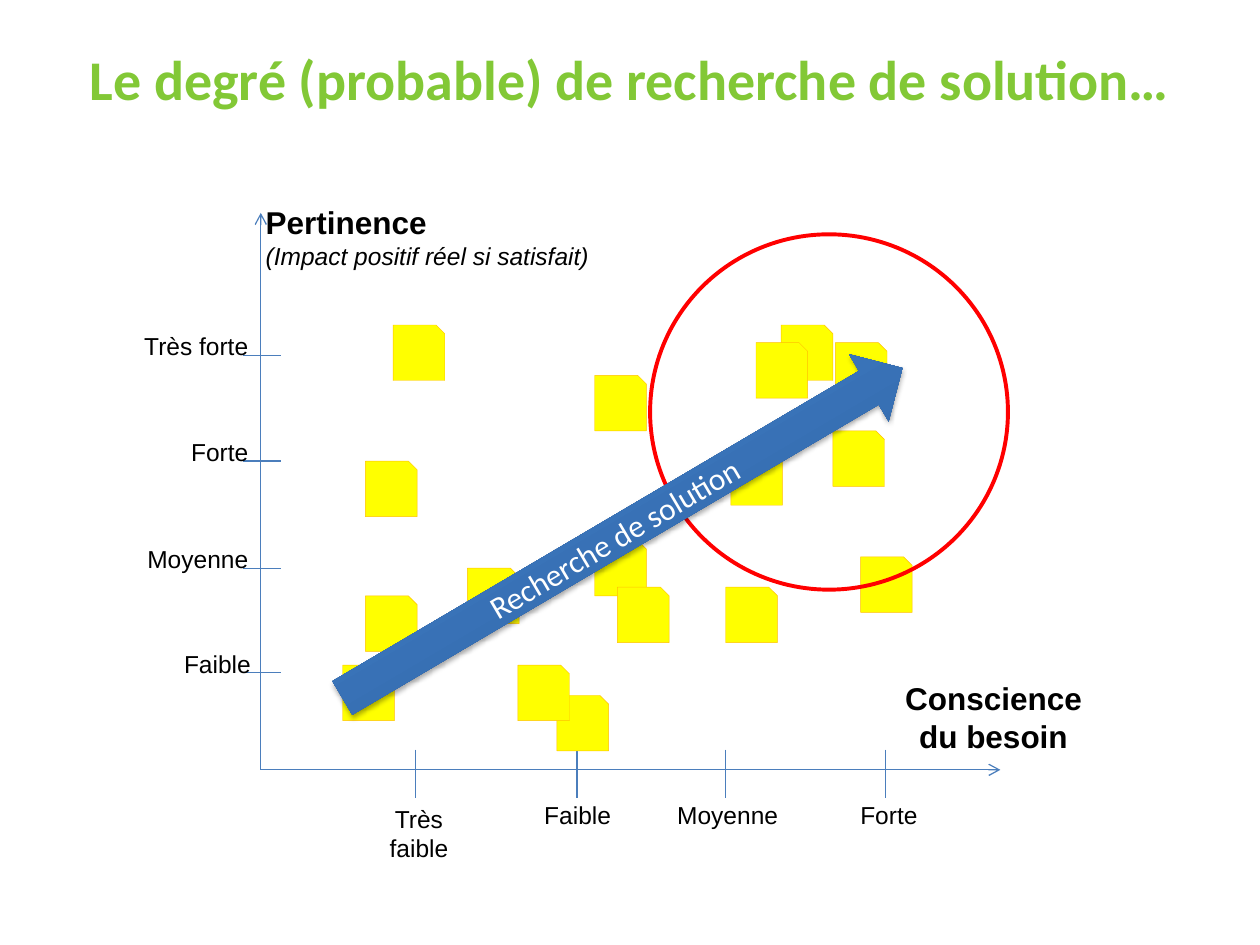
from dataclasses import dataclass

from lxml import etree
from pptx import Presentation
from pptx.dml.color import RGBColor
from pptx.enum.shapes import MSO_CONNECTOR, MSO_SHAPE
from pptx.enum.text import MSO_ANCHOR, PP_ALIGN
from pptx.oxml.ns import qn
from pptx.util import Inches, Pt

STRAIGHT = MSO_CONNECTOR.STRAIGHT
NOTE, CIRCLE, ARROW = MSO_SHAPE.SNIP_1_RECTANGLE, MSO_SHAPE.OVAL, MSO_SHAPE.RIGHT_ARROW
CENTER, RIGHT, JUSTIFY = PP_ALIGN.CENTER, PP_ALIGN.RIGHT, PP_ALIGN.JUSTIFY
MIDDLE = MSO_ANCHOR.MIDDLE

COLORS = {
    "title": "82C836", "text": "000000", "axis": "4B7EBC", "note": "FFFF00",
    "note_edge": "FFC000", "circle": "FF0000", "arrow_dark": "2F5F99",
    "arrow_light": "3D7CC7", "arrow_text": "FFFFFF", "shadow": "000000",
}


@dataclass
class Line:
    text: str
    size: int = 14
    bold: bool = False
    italic: bool = False


@dataclass
class Label:
    left: float
    top: float
    width: float
    height: float
    align: PP_ALIGN
    lines: list[Line]


def color(name: str) -> RGBColor:
    return RGBColor.from_string(COLORS[name])


def set_font(font, name: str, size: int, color_name: str) -> None:
    font.name, font.size = name, Pt(size)
    font.color.rgb = color(color_name)


def add_label(slide, label: Label) -> None:
    box = slide.shapes.add_textbox(
        Inches(label.left), Inches(label.top), Inches(label.width), Inches(label.height))
    box.text_frame.word_wrap = True
    para = box.text_frame.paragraphs[0]
    para.alignment, para.space_after = label.align, Pt(6)
    for index, line in enumerate(label.lines):
        if index:
            para.add_line_break()
        span = para.add_run()
        span.text = line.text
        set_font(span.font, "Arial", line.size, "text")
        span.font.bold, span.font.italic = line.bold, line.italic


def add_axis_line(slide, x1: float, y1: float, x2: float, y2: float,
                  arrowhead: bool = False) -> None:
    line = slide.shapes.add_connector(
        STRAIGHT, Inches(x1), Inches(y1), Inches(x2), Inches(y2))
    line.line.color.rgb, line.line.width = color("axis"), Pt(0.75)
    if arrowhead:
        etree.SubElement(line.line._get_or_add_ln(), qn("a:tailEnd"), type="arrow")
    etree.SubElement(line._element.spPr, qn("a:effectLst"))


def add_shape(slide, kind: MSO_SHAPE, left: float, top: float, width: float, height: float):
    shape = slide.shapes.add_shape(
        kind, Inches(left), Inches(top), Inches(width), Inches(height))
    shape.shadow.inherit = False
    return shape


def add_note(slide, left: float, top: float) -> None:
    note = add_shape(slide, NOTE, left, top, 0.41, 0.44)
    note.fill.solid()
    note.fill.fore_color.rgb = color("note")
    note.line.color.rgb, note.line.width = color("note_edge"), Pt(0.25)


def add_search_arrow(slide) -> None:
    arrow = add_shape(slide, ARROW, 2.36, 3.92, 5.16, 0.62)
    arrow.rotation = 329.5
    arrow.line.fill.background()
    arrow.fill.gradient()
    arrow.fill.gradient_angle = 90
    dark, light = arrow.fill.gradient_stops
    dark.color.rgb, dark.position = color("arrow_dark"), 0
    light.color.rgb, light.position = color("arrow_light"), 0.8
    # Soft shadow straight below
    effects = arrow._element.spPr.find(qn("a:effectLst"))
    shadow = etree.SubElement(
        effects, qn("a:outerShdw"), blurRad=str(Pt(3.1)), dist=str(Pt(1.8)),
        dir="5400000", rotWithShape="0")
    tint = etree.SubElement(shadow, qn("a:srgbClr"), val=COLORS["shadow"])
    etree.SubElement(tint, qn("a:alpha"), val="35000")

    arrow.text_frame.text = "Recherche de solution"
    arrow.text_frame.vertical_anchor = MIDDLE
    para = arrow.text_frame.paragraphs[0]
    para.alignment = CENTER
    set_font(para.runs[0].font, "Calibri", 18, "arrow_text")


# Axis geometry, labels and sticky notes
ORIGIN_X, ORIGIN_Y = 2.07, 6.11
X_TICKS = [3.3, 4.58, 5.76, 7.03]
Y_TICKS = [5.34, 4.51, 3.66, 2.82]
LABELS = [
    Label(2.01, 1.56, 3.12, 1.25, JUSTIFY, [
        Line("Pertinence", 18, bold=True),
        Line("(Impact positif réel si satisfait)", italic=True)]),
    Label(6.83, 5.34, 2.11, 0.63, CENTER, [
        Line("Conscience", 18, bold=True), Line("du besoin", 18, bold=True)]),
    Label(2.27, 6.33, 2.11, 0.81, CENTER, [Line("Très"), Line("faible")]),
    Label(3.53, 6.3, 2.11, 0.81, CENTER, [Line("Faible")]),
    Label(4.72, 6.3, 2.11, 0.81, CENTER, [Line("Moyenne")]),
    Label(6, 6.3, 2.11, 0.81, CENTER, [Line("Forte")]),
    Label(0.89, 5.1, 1.2, 0.6, RIGHT, [Line("Faible")]),
    Label(0.87, 4.27, 1.2, 0.6, RIGHT, [Line("Moyenne")]),
    Label(0.87, 3.42, 1.2, 0.6, RIGHT, [Line("Forte")]),
    Label(0.67, 2.58, 1.4, 0.6, RIGHT, [Line("Très forte")]),
]
NOTES = [
    (4.72, 2.98), (6.2, 2.58), (5.8, 3.57), (4.72, 4.29), (6.83, 4.42), (6.61, 3.42),
    (3.12, 2.58), (2.9, 3.66), (2.9, 4.73), (3.71, 4.51), (6, 2.72), (4.42, 5.52),
    (4.11, 5.28), (4.9, 4.66), (5.76, 4.66), (6.63, 2.72), (2.72, 5.28),
]


def main() -> None:
    deck = Presentation()
    deck.slide_width, deck.slide_height = Inches(10), Inches(7.5)
    slide = deck.slides.add_slide(deck.slide_layouts[5])

    # Title
    title = slide.shapes.title
    title.left, title.top = Inches(0.5), Inches(0.3)
    title.width, title.height = Inches(9), Inches(0.64)
    title.text_frame.text = "Le degré (probable) de recherche de solution…"
    title.text_frame.vertical_anchor = MIDDLE
    para = title.text_frame.paragraphs[0]
    para.alignment = CENTER
    set_font(para.runs[0].font, "Calibri", 32, "title")
    para.runs[0].font.bold = True

    # Axes and ticks
    add_axis_line(slide, ORIGIN_X, ORIGIN_Y, 7.94, ORIGIN_Y, arrowhead=True)
    add_axis_line(slide, ORIGIN_X, ORIGIN_Y, ORIGIN_X, 1.69, arrowhead=True)
    for x in X_TICKS:
        add_axis_line(slide, x, 5.95, x, 6.33)
    for y in Y_TICKS:
        add_axis_line(slide, 2.23, y, 1.93, y)
    for label in LABELS:
        add_label(slide, label)

    # Sticky notes, target circle and search arrow
    for left, top in NOTES:
        add_note(slide, left, top)
    circle = add_shape(slide, CIRCLE, 5.16, 1.86, 2.84, 2.82)
    circle.fill.background()
    circle.line.color.rgb, circle.line.width = color("circle"), Pt(2.25)
    add_search_arrow(slide)

    deck.save("out.pptx")


if __name__ == "__main__":
    main()
